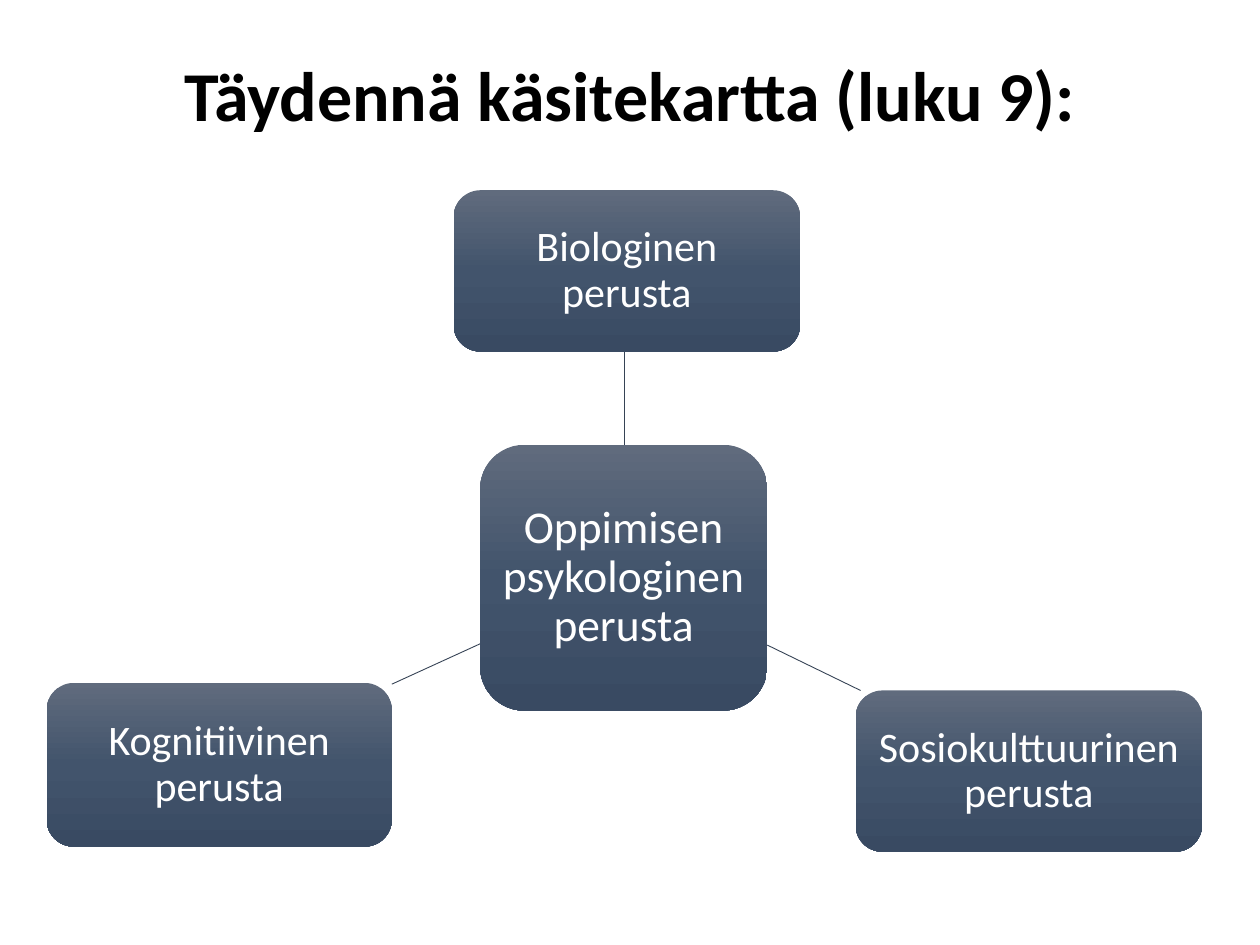
from copy import deepcopy

from pptx import Presentation
from pptx.dml.color import RGBColor
from pptx.enum.shapes import MSO_CONNECTOR, MSO_SHAPE
from pptx.enum.text import MSO_ANCHOR, MSO_AUTO_SIZE, PP_ALIGN
from pptx.oxml.ns import qn
from pptx.oxml.xmlchemy import OxmlElement
from pptx.util import Inches, Pt

BLACK = RGBColor(0x00, 0x00, 0x00)
WHITE = RGBColor(0xFF, 0xFF, 0xFF)
LINK_COLOR = RGBColor(0x36, 0x43, 0x55)
NODE_GRADIENT = [
    (0, RGBColor(0x60, 0x6B, 0x7D)),
    (0.5, RGBColor(0x42, 0x54, 0x6C)),
    (1, RGBColor(0x39, 0x4A, 0x62)),
]
FONT = "Calibri"
INSET = Inches(0.07)

# text, left, top, width, height, font size
NODES = [
    ("Oppimisen psykologinen perusta", 3.81, 3.53, 2.28, 2.11, 26),
    ("Biologinen perusta", 3.6, 1.51, 2.75, 1.28, 24),
    ("Sosiokulttuurinen perusta", 6.79, 5.48, 2.75, 1.28, 24),
    ("Kognitiivinen perusta", 0.37, 5.42, 2.74, 1.3, 24),
]
# from the central node to each basis
LINKS = [
    (4.96, 3.53, 4.96, 2.79),
    (6.09, 5.12, 6.83, 5.48),
    (3.81, 5.11, 3.11, 5.43),
]


def set_text(frame, text, size, color, bold=False):
    frame.text = text
    frame.word_wrap = True
    frame.auto_size = MSO_AUTO_SIZE.NONE
    frame.vertical_anchor = MSO_ANCHOR.MIDDLE
    paragraph = frame.paragraphs[0]
    paragraph.alignment = PP_ALIGN.CENTER
    paragraph.line_spacing = 0.9
    font = paragraph.runs[0].font
    font.name, font.size, font.bold = FONT, Pt(size), bold
    font.color.rgb = color


def fill_gradient(shape):
    """Fill with the three node colours, running from top to bottom."""
    shape.fill.gradient()
    shape.fill.gradient_angle = 270
    stop_list = shape._element.spPr.find(".//" + qn("a:gsLst"))
    stop_list.insert(1, deepcopy(stop_list[0]))
    for stop, (position, color) in zip(shape.fill.gradient_stops, NODE_GRADIENT):
        stop.position = position
        stop.color.rgb = color


def add_title(slide, text):
    title = slide.shapes.title
    title.left, title.top = Inches(0.69), Inches(0.06)
    title.width, title.height = Inches(8.62), Inches(1.45)
    set_text(title.text_frame, text, 40, BLACK, bold=True)


def add_node(slide, text, left, top, width, height, size):
    node = slide.shapes.add_shape(
        MSO_SHAPE.ROUNDED_RECTANGLE,
        Inches(left), Inches(top), Inches(width), Inches(height),
    )
    node.shadow.inherit = False
    node.line.fill.background()
    fill_gradient(node)
    frame = node.text_frame
    frame.margin_left = frame.margin_right = INSET
    frame.margin_top = frame.margin_bottom = INSET
    set_text(frame, text, size, WHITE)


def add_link(slide, *ends):
    link = slide.shapes.add_connector(
        MSO_CONNECTOR.STRAIGHT, *(Inches(end) for end in ends)
    )
    link.line.color.rgb = LINK_COLOR
    link.line.width = Pt(0.5)
    link._element.spPr.append(OxmlElement("a:effectLst"))


def main():
    presentation = Presentation()
    presentation.slide_width = Inches(10)
    presentation.slide_height = Inches(7.5)
    slide = presentation.slides.add_slide(presentation.slide_layouts[5])
    add_title(slide, "Täydennä käsitekartta (luku 9):")
    for link in LINKS:
        add_link(slide, *link)
    for node in NODES:
        add_node(slide, *node)
    presentation.save("out.pptx")


if __name__ == "__main__":
    main()
